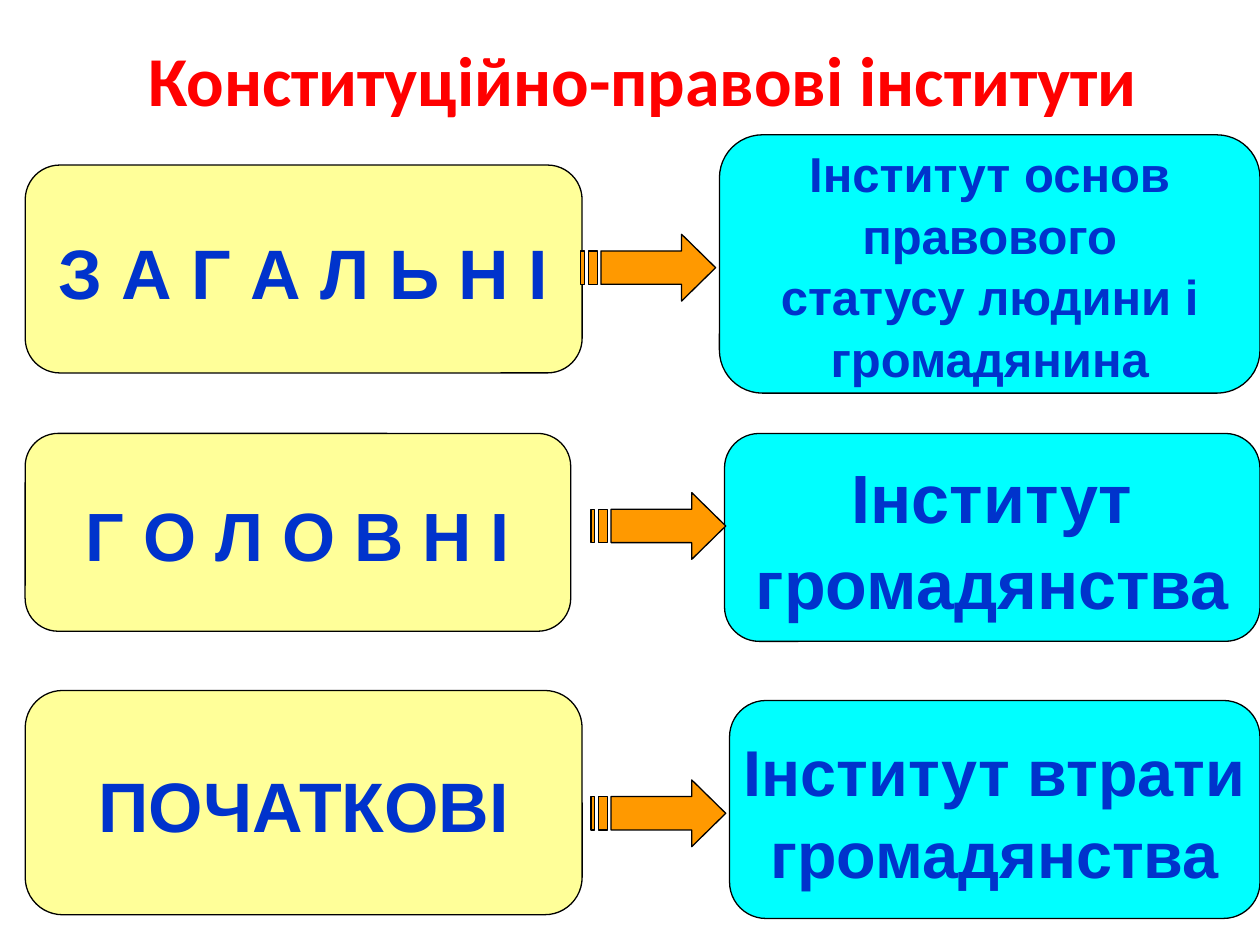
from dataclasses import dataclass

from pptx import Presentation
from pptx.dml.color import RGBColor
from pptx.enum.shapes import MSO_SHAPE as Shape
from pptx.enum.text import MSO_ANCHOR as Anchor, PP_ALIGN as Align
from pptx.util import Inches, Pt


@dataclass(frozen=True)
class Theme:
    title_font: str = "Calibri"
    body_font: str = "Arial"
    title_size: int = 40
    title: str = "FF0000"
    text: str = "0033CC"
    kind_fill: str = "FFFF99"
    institute_fill: str = "00FFFF"
    arrow_fill: str = "FF9900"
    outline: str = "000000"
    line_width: float = 0.75
    line_spacing: float = 1.05


THEME = Theme()

# Content: each row has a kind, an arrow position and an institute
TITLE = "Конституційно-правові інститути"
ROWS = [
    {
        "kind": (["З А Г А Л Ь Н І"], 40, (0.2, 1.31, 4.42, 1.65)),
        "arrow": (4.61, 1.86),
        "institute": (
            ["Інститут основ", "правового", "статусу людини і", "громадянина"],
            28, (5.71, 1.07, 4.29, 2.05)),
    },
    {
        "kind": (["Г О Л О В Н І"], 39, (0.2, 3.44, 4.33, 1.57)),
        "arrow": (4.69, 3.91),
        "institute": (["Інститут", "громадянства"], 39, (5.75, 3.44, 4.25, 1.65)),
    },
    {
        "kind": (["ПОЧАТКОВІ"], 40, (0.2, 5.48, 4.42, 1.78)),
        "arrow": (4.69, 6.19),
        "institute": (["Інститут втрати", "громадянства"], 37, (5.79, 5.56, 4.21, 1.73)),
    },
]

# Striped arrow, measured from its top left corner
ARROW_W, ARROW_H = 1.07, 0.53
SHAFT_TOP, SHAFT_BOTTOM = ARROW_H / 4, ARROW_H * 3 / 4
HEAD_X, SHAFT_X = 0.8, 0.16
STRIPES = [(0.06, 0.13), (0, 0.03)]
ARROW_OUTLINES = [
    [(HEAD_X, 0), (HEAD_X, SHAFT_TOP), (SHAFT_X, SHAFT_TOP),
     (SHAFT_X, SHAFT_BOTTOM), (HEAD_X, SHAFT_BOTTOM), (HEAD_X, ARROW_H),
     (ARROW_W, ARROW_H / 2)],
] + [
    [(left, SHAFT_TOP), (left, SHAFT_BOTTOM), (right, SHAFT_BOTTOM), (right, SHAFT_TOP)]
    for left, right in STRIPES
]


def paint(shape, fill):
    shape.shadow.inherit = False
    shape.fill.solid()
    shape.fill.fore_color.rgb = RGBColor.from_string(fill)
    shape.line.color.rgb = RGBColor.from_string(THEME.outline)
    shape.line.width = Pt(THEME.line_width)


def write(frame, lines, size, font, color, spacing=None):
    frame.vertical_anchor = Anchor.MIDDLE
    for index, line in enumerate(lines):
        para = frame.add_paragraph() if index else frame.paragraphs[0]
        para.alignment = Align.CENTER
        para.line_spacing = spacing
        span = para.add_run()
        span.text = line
        span.font.name = font
        span.font.size = Pt(size)
        span.font.bold = True
        span.font.color.rgb = RGBColor.from_string(color)


def add_title(page):
    box = page.shapes.add_textbox(*map(Inches, (0.2, 0, 9.8, 1.25)))
    box.text_frame.word_wrap = True
    write(box.text_frame, [TITLE], THEME.title_size, THEME.title_font, THEME.title)


def add_card(page, lines, size, place, fill):
    card = page.shapes.add_shape(Shape.ROUNDED_RECTANGLE, *map(Inches, place))
    card.adjustments[0] = 1 / 6
    paint(card, fill)
    frame = card.text_frame
    frame.word_wrap = False
    frame.margin_left = frame.margin_right = 0
    frame.margin_top = frame.margin_bottom = 0
    write(frame, lines, size, THEME.body_font, THEME.text, THEME.line_spacing)


def add_arrow(page, left, top):
    outlines = [[(Inches(left + x), Inches(top + y)) for x, y in outline]
                for outline in ARROW_OUTLINES]
    builder = page.shapes.build_freeform(*outlines[0][0])
    for index, (start, *rest) in enumerate(outlines):
        if index:
            builder.move_to(*start)
        builder.add_line_segments(rest, close=True)
    paint(builder.convert_to_shape(), THEME.arrow_fill)


def main():
    deck = Presentation()
    deck.slide_width, deck.slide_height = Inches(10), Inches(7.5)
    page = deck.slides.add_slide(deck.slide_layouts[6])

    add_title(page)
    for row in ROWS:
        add_card(page, *row["kind"], THEME.kind_fill)
        add_card(page, *row["institute"], THEME.institute_fill)
        add_arrow(page, *row["arrow"])

    deck.save("out.pptx")


if __name__ == "__main__":
    main()
